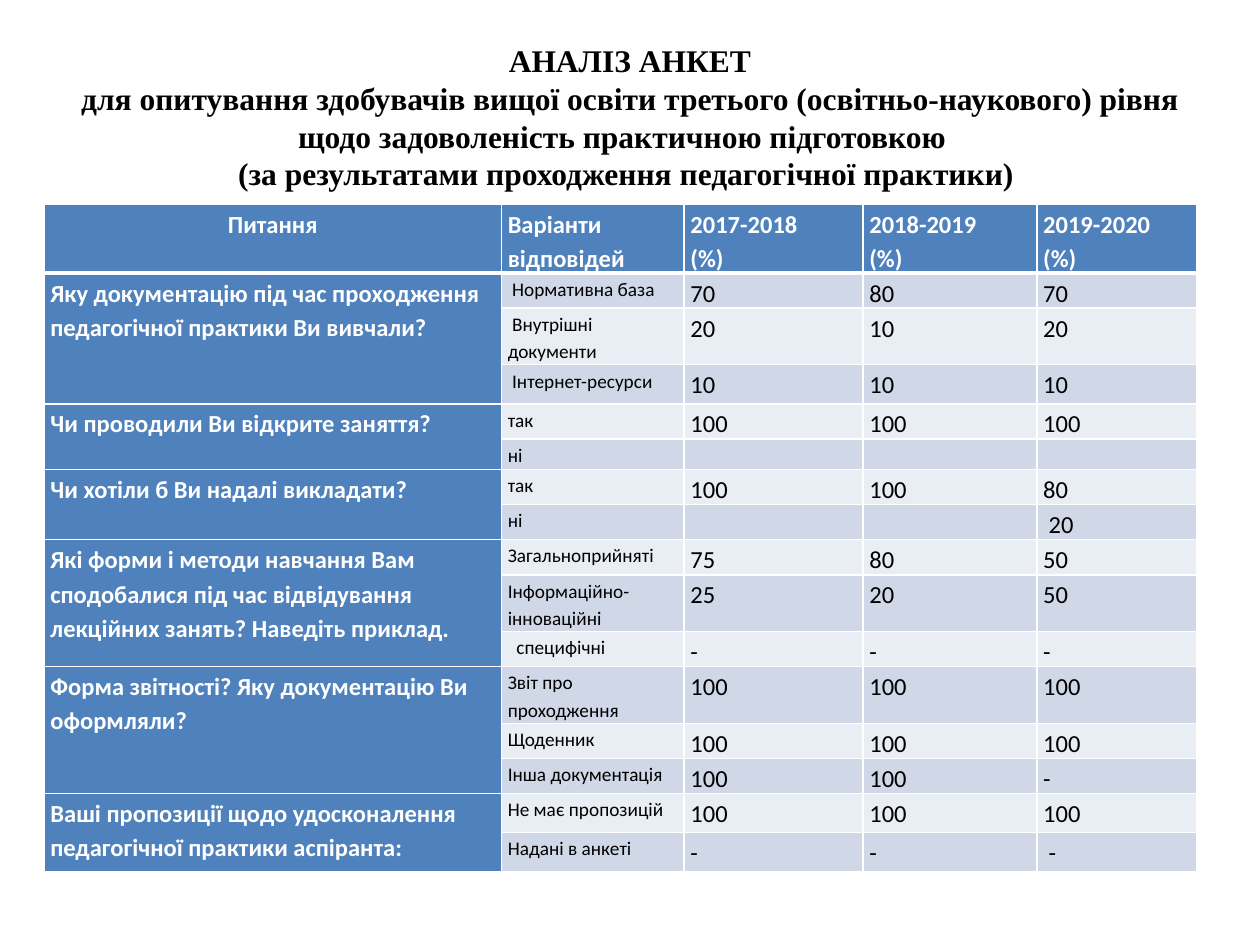
import pptx
import pptx.util
import pptx.dml.color
import pptx.enum.text
import pptx.oxml
import pptx.oxml.ns
from dataclasses import dataclass

Inches = pptx.util.Inches
Pt = pptx.util.Pt
ALIGN = pptx.enum.text.PP_ALIGN


@dataclass(frozen=True)
class Theme:
    head: str = "4F81BD"
    dark: str = "D0D8E8"
    light: str = "E9EDF4"
    white: str = "FFFFFF"
    black: str = "000000"
    serif: str = "Times New Roman"
    sans: str = "Calibri"
    title: int = 18
    body: int = 14
    small: int = 11


THEME = Theme()

TITLE = (
    "АНАЛІЗ АНКЕТ\v"
    "для опитування здобувачів вищої освіти третього (освітньо-наукового) рівня "
    "щодо задоволеність практичною підготовкою  \v"
    "(за результатами проходження педагогічної практики) "
)
HEADS = ["Питання", "Варіанти відповідей", "2017-2018\n(%)",
         "2018-2019\n(%)\u00a0", "2019-2020\n(%)"]

# Each question with its answers and their yearly shares
GROUPS = [
    ("Яку документацію під час проходження педагогічної практики Ви вивчали?", [
        (" Нормативна база", "70", "80", "70"),
        (" Внутрішні документи", "20", "10", "20"),
        (" Інтернет-ресурси", "10", "10", "10")]),
    ("Чи проводили Ви відкрите заняття?", [
        ("так", "100", "100", "100"),
        ("ні", "", "", "")]),
    ("Чи хотіли б Ви надалі викладати?", [
        ("так", "100", "100", "80"),
        ("ні", "", "", "\u00a020")]),
    ("Які форми і методи навчання Вам сподобалися під час відвідування "
     "лекційних занять? Наведіть приклад.", [
        ("Загальноприйняті", "75", "80", "50"),
        ("Інформаційно-інноваційні", "25", "20", "50"),
        ("  специфічні", "-", "-", "-")]),
    ("Форма звітності? Яку документацію Ви оформляли?", [
        ("Звіт про проходження", "100", "100", "100"),
        ("Щоденник", "100", "100", "100"),
        ("Інша документація", "100", "100", "-")]),
    ("Ваші пропозиції щодо удосконалення педагогічної практики аспіранта:", [
        ("Не має пропозицій", "100", "100", "100"),
        ("Надані в анкеті", "-", "-", "\u00a0-")]),
]
COLS = [3.63, 1.45, 1.42, 1.38, 1.27]
ROWS = [0.46, 0.24, 0.45, 0.31, 0.22, 0.23, 0.22, 0.22,
        0.23, 0.45, 0.22, 0.45, 0.22, 0.25, 0.31, 0.31]


def rgb(code):
    return pptx.dml.color.RGBColor.from_string(code)


def write(frame, text, size=THEME.body, color=THEME.black, bold=False,
          font=THEME.sans, align=None, space=None):
    """Fill a text frame, one paragraph per line of text."""
    frame.text = text
    for para in frame.paragraphs:
        para.alignment = align
        para.line_spacing = space
        for run in para.runs:
            run.font.size = Pt(size)
            run.font.name = font
            run.font.bold = bold
            run.font.color.rgb = rgb(color)
        # Line breaks and empty paragraphs keep the same type size
        for stop in para._p.findall(pptx.oxml.ns.qn("a:br")):
            stop.append(mark("rPr", size))
        if not para.runs:
            para._p.append(mark("endParaRPr", size))


def mark(tag, size):
    return pptx.oxml.parse_xml(
        f'<a:{tag} {pptx.oxml.ns.nsdecls("a")} sz="{size * 100}"/>')


def edge(cell, top=1, base=1):
    """Draw white borders on a cell; widths in points."""
    props = cell._tc.get_or_add_tcPr()
    for side, width in zip("LRTB", (1, 1, top, base)):
        props.append(pptx.oxml.parse_xml(
            f'<a:ln{side} {pptx.oxml.ns.nsdecls("a")} w="{Pt(width)}">'
            f'<a:solidFill><a:srgbClr val="{THEME.white}"/></a:solidFill>'
            f'</a:ln{side}>'))


def paint(cell, fill, **widths):
    edge(cell, **widths)
    cell.fill.solid()
    cell.fill.fore_color.rgb = rgb(fill)
    cell.margin_left = cell.margin_right = Inches(0.05)
    cell.margin_top = Inches(0.01)
    cell.margin_bottom = 0


def label(cell, text, **form):
    write(cell.text_frame, text, space=1.15, **form)


def add_title(slide):
    box = slide.shapes.add_textbox(
        Inches(0.5), Inches(0.3), Inches(9), Inches(1.25))
    frame = box.text_frame
    frame.word_wrap = True
    frame.vertical_anchor = pptx.enum.text.MSO_ANCHOR.MIDDLE
    write(frame, "")
    write(frame, TITLE, size=THEME.title, bold=True, font=THEME.serif,
          align=ALIGN.CENTER)


def add_grid(slide):
    grid = slide.shapes.add_table(
        len(ROWS), len(COLS), Inches(0.35), Inches(1.62),
        Inches(9.13), Inches(5.18)).table
    grid.horz_banding = False
    for col, width in zip(grid.columns, COLS):
        col.width = Inches(width)
    for row, height in zip(grid.rows, ROWS):
        row.height = Inches(height)

    # Header row
    for num, text in enumerate(HEADS):
        cell = grid.cell(0, num)
        paint(cell, THEME.head, base=3)
        label(cell, text, color=THEME.white, bold=True,
              align=None if num else ALIGN.CENTER)

    # Question groups with banded answer rows
    top = 1
    for ask, lines in GROUPS:
        for row, line in enumerate(lines, top):
            rule = 3 if row == 1 else 1
            paint(grid.cell(row, 0), THEME.head, top=rule)
            band = THEME.dark if row % 2 else THEME.light
            for num, text in enumerate(line, 1):
                cell = grid.cell(row, num)
                paint(cell, band, top=rule)
                label(cell, text, size=THEME.small if num == 1 else THEME.body)
        last = top + len(lines) - 1
        grid.cell(top, 0).merge(grid.cell(last, 0))
        label(grid.cell(top, 0), ask, color=THEME.white, bold=True)
        top = last + 1


def main():
    deck = pptx.Presentation()
    deck.slide_width = Inches(10)
    deck.slide_height = Inches(7.5)
    slide = deck.slides.add_slide(deck.slide_layouts[6])
    add_title(slide)
    add_grid(slide)
    deck.save("out.pptx")


if __name__ == "__main__":
    main()
